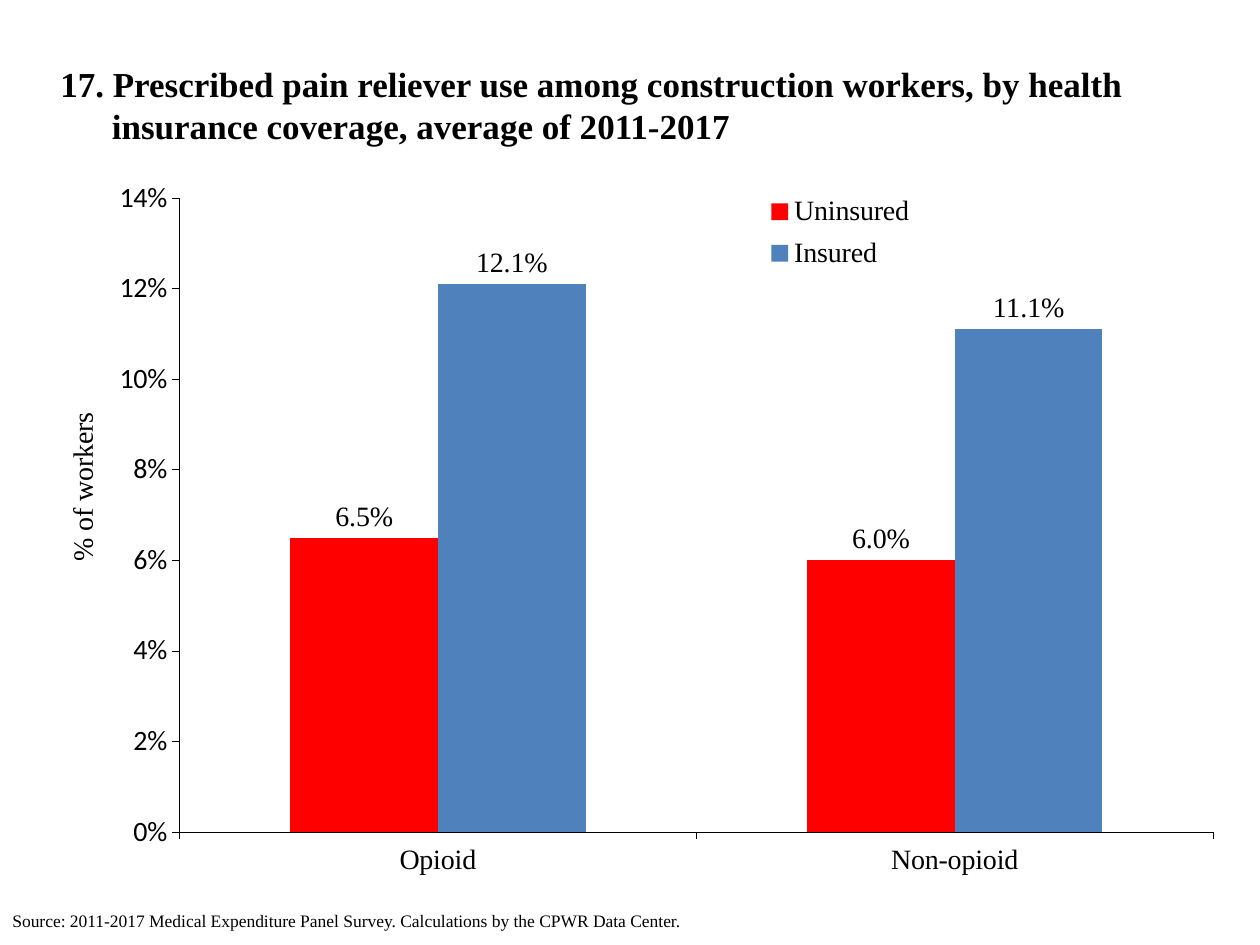
from lxml.etree import SubElement
from pptx import Presentation
from pptx.chart.data import CategoryChartData
from pptx.dml.color import RGBColor
from pptx.enum.chart import XL_CHART_TYPE, XL_LABEL_POSITION, XL_LEGEND_POSITION, XL_TICK_MARK
from pptx.enum.text import MSO_ANCHOR
from pptx.oxml.ns import qn
from pptx.util import Inches, Pt

SERIF = "Times New Roman"
TITLE = ("17. Prescribed pain reliever use among construction workers, by health "
         "insurance coverage, average of 2011-2017")
SOURCE = ("Source: 2011-2017 Medical Expenditure Panel Survey. "
          "Calculations by the CPWR Data Center.")
CATEGORIES = ["Opioid", "Non-opioid"]
SERIES = [
    ("Uninsured", [0.065, 0.06], "FF0000"),
    ("Insured", [0.121, 0.111], "4F81BD"),
]


def color(hex_value):
    return RGBColor.from_string(hex_value)


def style(font, size, name=SERIF, bold=False):
    font.size, font.name, font.bold = Pt(size), name, bold
    font.color.rgb = color("000000")


def add_text(slide, text, box, size, bold=False):
    frame = slide.shapes.add_textbox(*map(Inches, box)).text_frame
    frame.word_wrap = True
    paragraph = frame.paragraphs[0]
    paragraph.text = text
    style(paragraph.font, size, bold=bold)
    return frame


def place(element, previous, **fractions):
    """Give a chart part a manual layout, as fractions of the chart, after a sibling tag."""
    for old in element.findall(qn("c:layout")):
        element.remove(old)
    layout = SubElement(element, qn("c:layout"))
    manual = SubElement(layout, qn("c:manualLayout"))
    if previous is None:
        element.insert(0, layout)
        SubElement(manual, qn("c:layoutTarget")).set("val", "inner")
    else:
        element.find(qn(previous)).addnext(layout)
    for key in ("x", "y"):
        SubElement(manual, qn(f"c:{key}Mode")).set("val", "edge")
    for key, value in fractions.items():
        SubElement(manual, qn(f"c:{key}")).set("val", str(value))


def add_worker_chart(slide):
    data = CategoryChartData(number_format="0.0%")
    data.categories = CATEGORIES
    for name, values, _ in SERIES:
        data.add_series(name, values)
    box = map(Inches, (0.38, 1.42, 9.25, 5.67))
    chart = slide.shapes.add_chart(XL_CHART_TYPE.COLUMN_CLUSTERED, *box, data).chart
    style(chart.font, 16)
    chart.has_title = False

    plot = chart.plots[0]
    plot.gap_width, plot.overlap, plot.vary_by_categories = 150, 0, False
    for series, (_, _, fill) in zip(plot.series, SERIES):
        series.format.fill.solid()
        series.format.fill.fore_color.rgb = color(fill)
        labels = series.data_labels
        labels.show_value = True
        labels.number_format, labels.number_format_is_linked = "0.0%", False
        labels.position = XL_LABEL_POSITION.OUTSIDE_END
        style(labels.font, 16)

    workers = chart.value_axis
    for axis, font_name in ((chart.category_axis, SERIF), (workers, "Calibri")):
        axis.has_major_gridlines = False
        axis.major_tick_mark = XL_TICK_MARK.OUTSIDE
        axis.format.line.color.rgb = color("000000")
        axis.format.line.width = Pt(0.25)
        style(axis.tick_labels.font, 16, font_name)
    workers.minimum_scale, workers.maximum_scale, workers.major_unit = 0, 0.14, 0.02
    workers.tick_labels.number_format = "0%"
    workers.tick_labels.number_format_is_linked = False
    heading = workers.axis_title.text_frame
    heading.text = "% of workers"
    style(heading.paragraphs[0].font, 16)

    chart.has_legend = True
    chart.legend.position = XL_LEGEND_POSITION.TOP
    chart.legend.include_in_layout = False
    style(chart.legend.font, 16)

    plot_area = chart.element.find(".//" + qn("c:plotArea"))
    place(plot_area, None, x=0.113, y=0.027, w=0.887, h=0.887)
    place(plot_area.find(".//" + qn("c:title")), "c:tx", x=0.01, y=0.32)
    legend = chart.element.find(".//" + qn("c:legend"))
    place(legend, "c:legendPos", x=0.6, y=0.01, w=0.16, h=0.13)


def main():
    deck = Presentation()
    deck.slide_width, deck.slide_height = Inches(10), Inches(7.5)
    slide = deck.slides.add_slide(deck.slide_layouts[6])

    title = add_text(slide, TITLE, (0.38, 0.33, 9.25, 1), 20, bold=True)
    title.vertical_anchor = MSO_ANCHOR.MIDDLE
    hanging = title.paragraphs[0]._p.get_or_add_pPr()
    hanging.set("marL", str(Inches(0.41)))
    hanging.set("indent", str(-Inches(0.41)))

    add_worker_chart(slide)
    add_text(slide, SOURCE, (0, 7.17, 10, 0.27), 10)
    deck.save("out.pptx")


if __name__ == "__main__":
    main()
